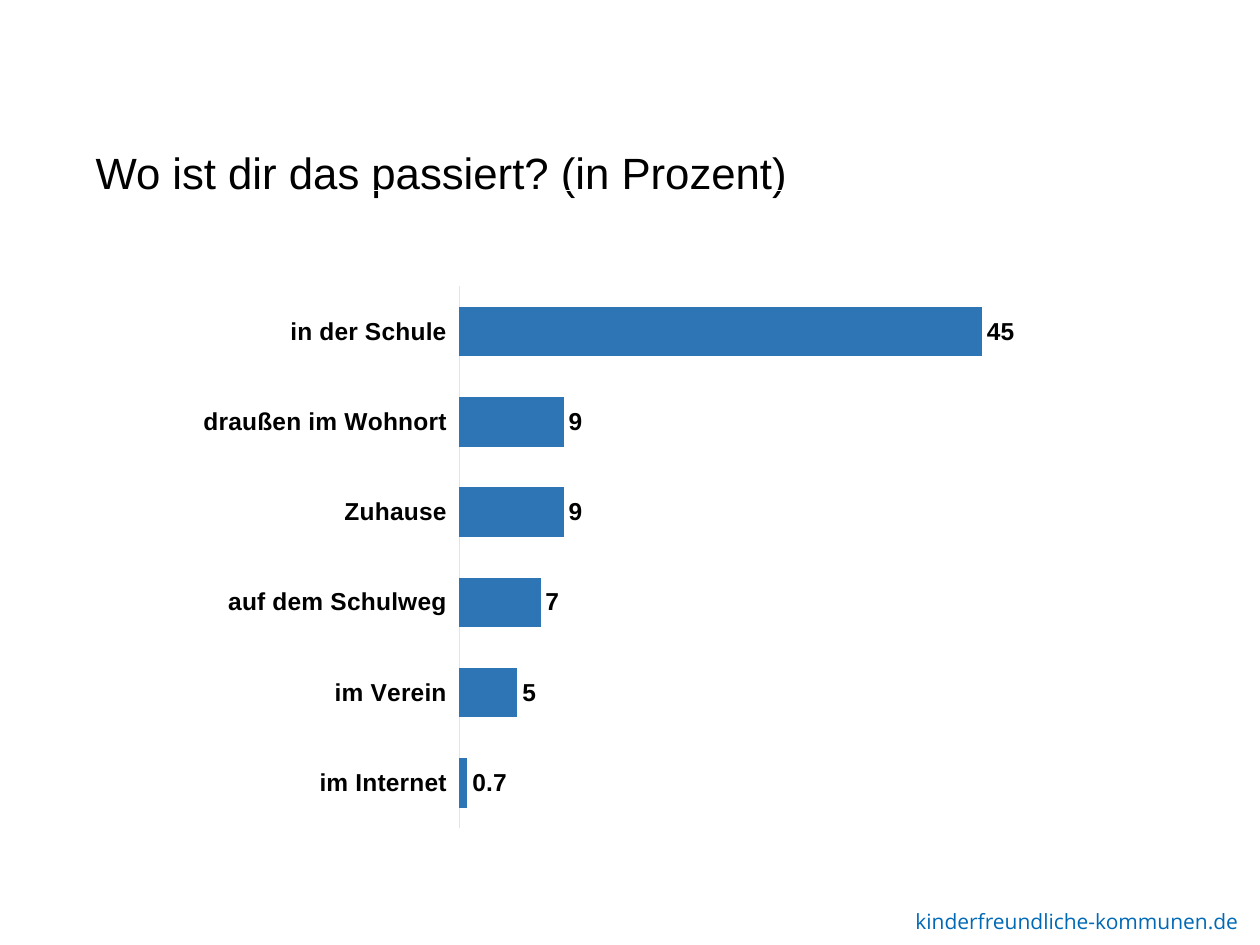
from lxml import etree
from pptx import Presentation
from pptx.chart.data import CategoryChartData
from pptx.dml.color import RGBColor
from pptx.enum.chart import XL_CHART_TYPE, XL_LABEL_POSITION, XL_TICK_LABEL_POSITION, XL_TICK_MARK
from pptx.enum.text import MSO_ANCHOR, MSO_AUTO_SIZE, PP_ALIGN
from pptx.oxml import parse_xml
from pptx.oxml.ns import nsdecls, qn
from pptx.util import Pt

BAR_CLUSTERED = XL_CHART_TYPE.BAR_CLUSTERED
OUTSIDE_END = XL_LABEL_POSITION.OUTSIDE_END
LABELS_LOW = XL_TICK_LABEL_POSITION.LOW
NO_TICKS = XL_TICK_MARK.NONE
TOP, LEFT = MSO_ANCHOR.TOP, PP_ALIGN.LEFT
PX = 914400 / 126
BLUE, BAR_BLUE, BLACK = "0069B5", "2E75B6", "000000"


def px(*lengths):
    """Turn pixel lengths into EMU."""
    return [round(length * PX) for length in lengths]


def style(font, size, color, name="Arial", bold=False):
    font.name, font.size, font.bold = name, Pt(size), bold
    font.color.rgb = RGBColor.from_string(color)


prs = Presentation()
prs.slide_width, prs.slide_height = px(1260, 945)
slide = prs.slides.add_slide(prs.slide_layouts[5])

# Website
website = slide.shapes.add_textbox(*px(903, 902, 369, 38)).text_frame
website.word_wrap = True
website.auto_size = MSO_AUTO_SIZE.SHAPE_TO_FIT_TEXT
address = website.paragraphs[0].add_run()
address.text = "kinderfreundliche-kommunen.de"
style(address.font, 12, BLUE, "Open Sans")

# Question
question = slide.shapes.title
question.left, question.top, question.width, question.height = px(83, 145, 1086, 135)
question.text_frame.vertical_anchor = TOP
question.text_frame.auto_size = MSO_AUTO_SIZE.NONE
paragraph = question.text_frame.paragraphs[0]
paragraph.alignment = LEFT
paragraph.line_spacing = 0.9
wording = paragraph.add_run()
wording.text = "Wo ist dir das passiert? (in Prozent)"
style(wording.font, 25, BLACK)

# Answers, listed from the bottom bar upwards
answers = {
    "im Internet": 0.7,
    "im Verein": 5,
    "auf dem Schulweg": 7,
    "Zuhause": 9,
    "draußen im Wohnort": 9,
    "in der Schule": 45,
}
data = CategoryChartData()
data.categories = list(answers)
data.add_series("Series 1", list(answers.values()))
chart = slide.shapes.add_chart(BAR_CLUSTERED, *px(-26, 190, 1131, 662), data).chart
chart.has_title = False
chart.has_legend = False
style(chart.font, 10, BLUE, "Open Sans")

places = chart.category_axis
places.major_tick_mark = places.minor_tick_mark = NO_TICKS
places.tick_label_position = LABELS_LOW
places.has_major_gridlines = False
places.format.line.color.rgb = RGBColor.from_string("CEEAFF")
places.format.line.width = Pt(0.75)
style(places.tick_labels.font, 14, BLACK, bold=True)

percent = chart.value_axis
percent.minimum_scale, percent.maximum_scale = 0, 50
percent.has_major_gridlines = False
percent.visible = False

plot = chart.plots[0]
plot.gap_width, plot.overlap = 82, -8
plot.vary_by_categories = False
bars = plot.series[0]
bars.format.fill.solid()
bars.format.fill.fore_color.rgb = RGBColor.from_string(BAR_BLUE)
labels = bars.data_labels
labels.show_value = True
labels.position = OUTSIDE_END
style(labels.font, 14, BLACK, bold=True)

# Fixed inner plot area
area = chart._chartSpace.chart.plotArea
for automatic in area.findall(qn("c:layout")):
    area.remove(automatic)
layout = parse_xml(f'<c:layout {nsdecls("c")}><c:manualLayout/></c:layout>')
for tag, value in (("layoutTarget", "inner"), ("xMode", "edge"), ("yMode", "edge"),
                   ("x", "0.429"), ("y", "0.145"), ("w", "0.514"), ("h", "0.82")):
    etree.SubElement(layout[0], qn(f"c:{tag}")).set("val", value)
area.insert(0, layout)

# White frame around an unfilled chart
chart._chartSpace.chart.addnext(parse_xml(
    f'<c:spPr {nsdecls("c", "a")}><a:noFill/><a:ln w="{Pt(0.75)}"><a:solidFill>'
    '<a:srgbClr val="FFFFFF"/></a:solidFill></a:ln></c:spPr>'))

prs.save("out.pptx")
